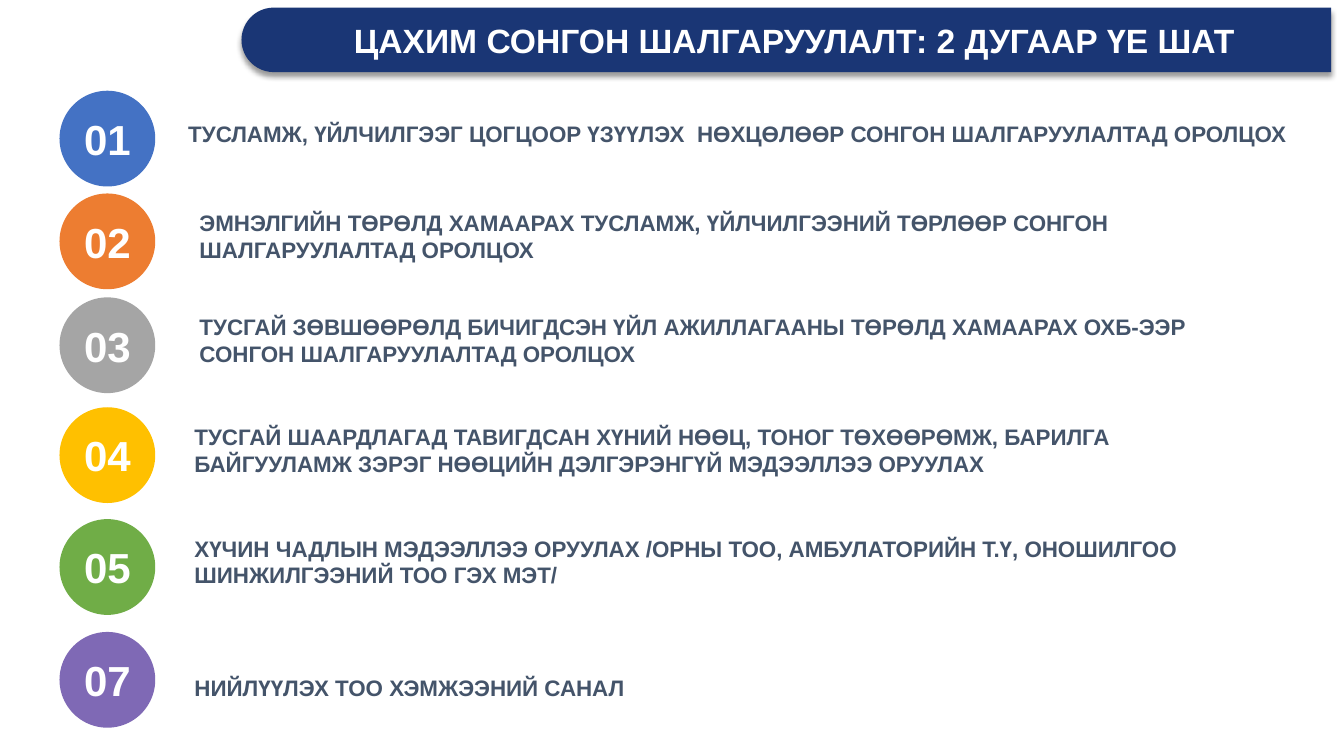
from dataclasses import dataclass

from lxml.etree import SubElement
from pptx import Presentation
from pptx.dml.color import RGBColor
from pptx.enum.shapes import MSO_SHAPE
from pptx.enum.text import MSO_ANCHOR, MSO_AUTO_SIZE, PP_ALIGN
from pptx.oxml.ns import qn
from pptx.shapes.autoshape import Shape
from pptx.slide import Slide
from pptx.util import Pt


@dataclass(frozen=True)
class Theme:
    font: str = "Arial"
    banner: str = "1A3675"
    light: str = "FFFFFF"
    body: str = "44546A"
    shadow: str = "000000"
    title_size: float = 24
    number_size: float = 30
    step_size: float = 16


@dataclass(frozen=True)
class Box:
    left: float
    top: float
    width: float
    height: float


@dataclass(frozen=True)
class Step:
    number: str
    color: str
    top: float
    text: str
    left: float = 131.8
    width: float = 771.8
    bottom: float = 53
    lines: int = 2
    wrap: bool = True


THEME = Theme()
CIRCLE_LEFT, CIRCLE_SIZE = 42.5, 68.4
NUMBER_WIDTH, NUMBER_HEIGHT = 48.2, 43.9
LINE_HEIGHT, BOX_PADDING = 19.4, 7.2

STEPS = [
    Step("01", "4472C4", 64.8,
         "ТУСЛАМЖ, ҮЙЛЧИЛГЭЭГ ЦОГЦООР ҮЗҮҮЛЭХ  НӨХЦӨЛӨӨР СОНГОН ШАЛГАРУУЛАЛТАД ОРОЛЦОХ",
         left=127.4, width=820.8, bottom=43.9, lines=1, wrap=False),
    Step("02", "ED7D31", 138.2,
         "ЭМНЭЛГИЙН ТӨРӨЛД ХАМААРАХ ТУСЛАМЖ, ҮЙЛЧИЛГЭЭНИЙ ТӨРЛӨӨР СОНГОН "
         "ШАЛГАРУУЛАЛТАД ОРОЛЦОХ", left=135.4, width=745.9),
    Step("03", "A5A5A5", 212.4,
         "ТУСГАЙ ЗӨВШӨӨРӨЛД БИЧИГДСЭН ҮЙЛ АЖИЛЛАГААНЫ ТӨРӨЛД ХАМААРАХ ОХБ-ЭЭР "
         "СОНГОН ШАЛГАРУУЛАЛТАД ОРОЛЦОХ", left=135.4, width=764.6),
    Step("04", "FFC000", 290.9,
         "ТУСГАЙ ШААРДЛАГАД ТАВИГДСАН ХҮНИЙ НӨӨЦ, ТОНОГ ТӨХӨӨРӨМЖ, БАРИЛГА "
         "БАЙГУУЛАМЖ ЗЭРЭГ НӨӨЦИЙН ДЭЛГЭРЭНГҮЙ МЭДЭЭЛЛЭЭ ОРУУЛАХ"),
    Step("05", "70AD47", 370.8,
         "ХҮЧИН ЧАДЛЫН МЭДЭЭЛЛЭЭ ОРУУЛАХ /ОРНЫ ТОО, АМБУЛАТОРИЙН Т.Ү, ОНОШИЛГОО "
         "ШИНЖИЛГЭЭНИЙ ТОО ГЭХ МЭТ/"),
    Step("07", "7F69B5", 451.4, "НИЙЛҮҮЛЭХ ТОО ХЭМЖЭЭНИЙ САНАЛ", lines=1),
]


def add_filled(slide: Slide, kind: MSO_SHAPE, box: Box, color: str) -> Shape:
    outline = slide.shapes.add_shape(
        kind, Pt(box.left), Pt(box.top), Pt(box.width), Pt(box.height))
    outline.shadow.inherit = False
    outline.fill.solid()
    outline.fill.fore_color.rgb = RGBColor.from_string(color)
    outline.line.fill.background()
    return outline


def add_words(slide: Slide, words: str, box: Box, size: float, color: str,
              frame_format: dict, paragraph_format: dict) -> None:
    frame = slide.shapes.add_textbox(
        Pt(box.left), Pt(box.top), Pt(box.width), Pt(box.height)).text_frame
    paragraph = frame.paragraphs[0]
    paragraph.text = words
    font = paragraph.runs[0].font
    font_format = {"name": THEME.font, "size": Pt(size), "bold": True}
    for target, values in ((frame, frame_format),
                           (paragraph, paragraph_format),
                           (font, font_format)):
        for attribute, value in values.items():
            setattr(target, attribute, value)
    font.color.rgb = RGBColor.from_string(color)


def add_banner(slide: Slide) -> None:
    # Bar with a rounded left end, made by turning a round-topped shape
    banner = add_filled(slide, MSO_SHAPE.ROUND_2_SAME_RECTANGLE,
                        Box(538.6, -360.7, 46.1, 778.3), THEME.banner)
    banner.rotation = 270
    banner.adjustments[0] = 0.5
    banner.adjustments[1] = 0

    # Soft shadow below the bar
    effects = banner._element.spPr.find(qn("a:effectLst"))
    shadow = SubElement(effects, qn("a:outerShdw"), blurRad=str(Pt(4)),
                        dist=str(Pt(3)), dir="5400000", rotWithShape="0")
    tint = SubElement(shadow, qn("a:srgbClr"), val=THEME.shadow)
    SubElement(tint, qn("a:alpha"), val="40000")

    # Title
    add_words(slide, "ЦАХИМ СОНГОН ШАЛГАРУУЛАЛТ: 2 ДУГААР ҮЕ ШАТ",
              Box(194.4, 7.2, 745.9, 46.1), THEME.title_size, THEME.light,
              {"word_wrap": True, "vertical_anchor": MSO_ANCHOR.MIDDLE},
              {"alignment": PP_ALIGN.CENTER, "line_spacing": 0.9})


def add_step(slide: Slide, step: Step) -> None:
    # Numbered circle
    add_filled(slide, MSO_SHAPE.OVAL,
               Box(CIRCLE_LEFT, step.top, CIRCLE_SIZE, CIRCLE_SIZE), step.color)
    number_box = Box(CIRCLE_LEFT + (CIRCLE_SIZE - NUMBER_WIDTH) / 2,
                     step.top + (CIRCLE_SIZE - NUMBER_HEIGHT) / 2,
                     NUMBER_WIDTH, NUMBER_HEIGHT)
    add_words(slide, step.number, number_box, THEME.number_size, THEME.light,
              {"word_wrap": False, "vertical_anchor": MSO_ANCHOR.MIDDLE,
               "auto_size": MSO_AUTO_SIZE.SHAPE_TO_FIT_TEXT},
              {"alignment": PP_ALIGN.CENTER})

    # Description, set from its bottom edge upwards
    height = step.lines * LINE_HEIGHT + BOX_PADDING
    add_words(slide, step.text,
              Box(step.left, step.top + step.bottom - height, step.width, height),
              THEME.step_size, THEME.body,
              {"word_wrap": step.wrap, "vertical_anchor": MSO_ANCHOR.BOTTOM,
               "auto_size": MSO_AUTO_SIZE.SHAPE_TO_FIT_TEXT},
              {"alignment": PP_ALIGN.LEFT})


def main() -> None:
    deck = Presentation()
    deck.slide_width, deck.slide_height = Pt(960), Pt(540)
    slide = deck.slides.add_slide(deck.slide_layouts[6])
    add_banner(slide)
    for step in STEPS:
        add_step(slide, step)
    deck.save("out.pptx")


if __name__ == "__main__":
    main()
